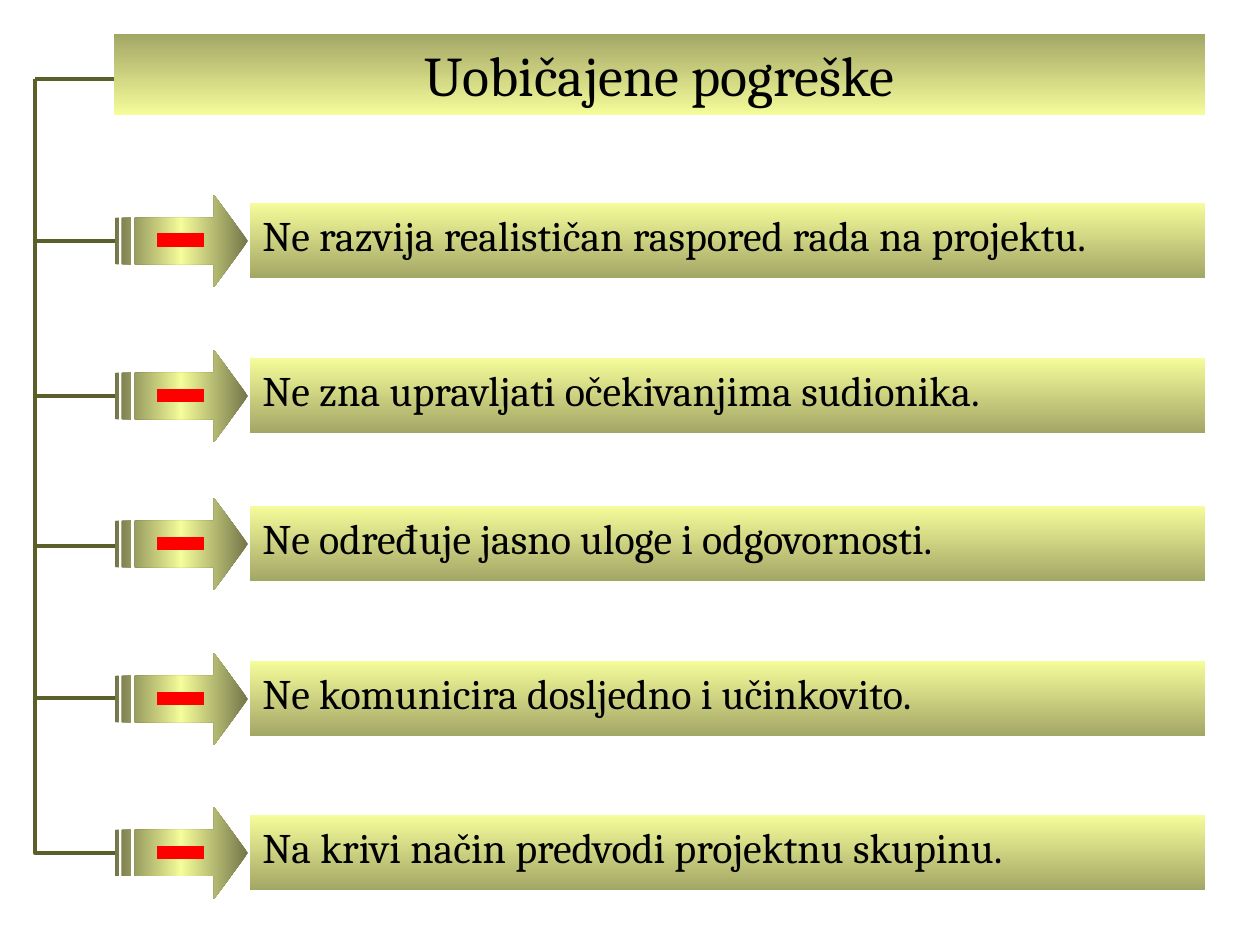
from dataclasses import dataclass

import lxml.etree
import pptx
import pptx.dml.color
import pptx.enum.shapes
import pptx.enum.text
import pptx.oxml
import pptx.oxml.ns
import pptx.util

EMU_PER_PX = 914400 / 126
FONT = "Cambria"
COLORS = {"light": "F5FC9A", "line": "5B602B", "minus": "FF0000", "text": "000000"}
SHAPES = pptx.enum.shapes.MSO_SHAPE
ALIGN = pptx.enum.text.PP_ALIGN

BAR_LEFT, BAR_WIDTH, BAR_HEIGHT = 250, 955, 75
ARROW_LEFT, ARROW_RISE = 115, 8
TRUNK_X, TITLE_JOINT_Y = 35, 79
ARROW_CONTOURS = [
    [(99, 0), (99, 23), (20, 23), (20, 69), (99, 69), (99, 92), (133, 46)],
    [(7, 23), (7, 69), (16, 69), (16, 23)],
    [(0, 23), (0, 69), (4, 69), (4, 23)],
]


@dataclass(frozen=True)
class Stop:
    position: int
    shade: int = 100000


@dataclass(frozen=True)
class Mistake:
    text: str
    top: int
    branch_start: int
    branch_end: int


BAR_STOPS = [Stop(0), Stop(100000, 66667)]
ARROW_STOPS = [Stop(0, 47000), Stop(50000), Stop(100000, 47000)]
MISTAKES = [
    Mistake("Ne razvija realističan raspored rada na projektu.", 203, 79, 241),
    Mistake("Ne zna upravljati očekivanjima sudionika.", 358, 241, 396),
    Mistake("Ne određuje jasno uloge i odgovornosti.", 506, 391, 546),
    Mistake("Ne komunicira dosljedno i učinkovito.", 661, 543, 698),
    Mistake("Na krivi način predvodi projektnu skupinu.", 815, 698, 853),
]


def px(value: int) -> pptx.util.Emu:
    return pptx.util.Emu(round(value * EMU_PER_PX))


def rgb(name: str) -> pptx.dml.color.RGBColor:
    return pptx.dml.color.RGBColor.from_string(COLORS[name])


def stop_xml(stop: Stop) -> str:
    shade = ""
    if stop.shade < 100000:
        shade = f'<a:gamma/><a:shade val="{stop.shade}"/><a:invGamma/>'
    return f'<a:gs pos="{stop.position}"><a:srgbClr val="{COLORS["light"]}">{shade}</a:srgbClr></a:gs>'


def fill_gradient(shape, stops: list[Stop], degrees: int) -> None:
    shape.shadow.inherit = False
    shape.line.fill.background()
    shape.fill.background()
    gradient = pptx.oxml.parse_xml(
        f'<a:gradFill {pptx.oxml.ns.nsdecls("a")} rotWithShape="1">'
        f'<a:gsLst>{"".join(map(stop_xml, stops))}</a:gsLst>'
        f'<a:lin ang="{degrees * 60000}" scaled="1"/></a:gradFill>'
    )
    properties = shape.element.spPr
    properties.replace(properties.find(pptx.oxml.ns.qn("a:noFill")), gradient)


def add_bar(slide, text: str, left: int, top: int, width: int, height: int,
            size: int, degrees: int, alignment) -> None:
    shape = slide.shapes.add_shape(SHAPES.RECTANGLE, px(left), px(top), px(width), px(height))
    fill_gradient(shape, BAR_STOPS, degrees)
    text_frame = shape.text_frame
    text_frame.text = text
    text_frame.word_wrap = True
    text_frame.auto_size = pptx.enum.text.MSO_AUTO_SIZE.SHAPE_TO_FIT_TEXT
    text_frame.vertical_anchor = pptx.enum.text.MSO_ANCHOR.TOP
    paragraph = text_frame.paragraphs[0]
    paragraph.alignment = alignment
    font = paragraph.runs[0].font
    font.name = FONT
    font.size = pptx.util.Pt(size)
    font.color.rgb = rgb("text")


def add_arrow(slide, top: int) -> None:
    contours = [[(ARROW_LEFT + x, top + y) for x, y in contour] for contour in ARROW_CONTOURS]
    builder = slide.shapes.build_freeform(*contours[0][0], scale=EMU_PER_PX)
    builder.add_line_segments(contours[0][1:], close=True)
    for contour in contours[1:]:
        builder.move_to(*contour[0])
        builder.add_line_segments(contour[1:], close=True)
    fill_gradient(builder.convert_to_shape(), ARROW_STOPS, 0)

    minus = slide.shapes.add_shape(SHAPES.MATH_MINUS, px(149), px(top + 16), px(64), px(59))
    minus.shadow.inherit = False
    minus.fill.solid()
    minus.fill.fore_color.rgb = rgb("minus")
    minus.line.fill.background()


def add_line(slide, kind, start_y: int, end_x: int, end_y: int):
    connector = slide.shapes.add_connector(kind, px(TRUNK_X), px(start_y), px(end_x), px(end_y))
    connector.line.color.rgb = rgb("line")
    connector.line.width = pptx.util.Pt(2.25)
    lxml.etree.SubElement(connector.element.spPr, pptx.oxml.ns.qn("a:effectLst"))
    return connector


def add_branch(slide, start_y: int, end_y: int) -> None:
    connector = add_line(slide, pptx.enum.shapes.MSO_CONNECTOR.ELBOW, start_y, ARROW_LEFT, end_y)
    adjustments = connector.element.spPr.find(".//" + pptx.oxml.ns.qn("a:avLst"))
    lxml.etree.SubElement(adjustments, pptx.oxml.ns.qn("a:gd"), name="adj1", fmla="val 0")


def main() -> None:
    presentation = pptx.Presentation()
    presentation.slide_width = px(1260)
    presentation.slide_height = px(945)
    slide = presentation.slides.add_slide(presentation.slide_layouts[6])

    for mistake in MISTAKES:
        add_bar(slide, mistake.text, BAR_LEFT, mistake.top, BAR_WIDTH, BAR_HEIGHT, 24, 90, ALIGN.LEFT)
    for mistake in MISTAKES:
        add_arrow(slide, mistake.top - ARROW_RISE)
    for mistake in MISTAKES:
        add_branch(slide, mistake.branch_start, mistake.branch_end)
    add_line(slide, pptx.enum.shapes.MSO_CONNECTOR.STRAIGHT, TITLE_JOINT_Y, 123, TITLE_JOINT_Y)
    add_bar(slide, "Uobičajene pogreške", 114, 34, 1091, 81, 32, 270, ALIGN.CENTER)

    presentation.save("out.pptx")


if __name__ == "__main__":
    main()
